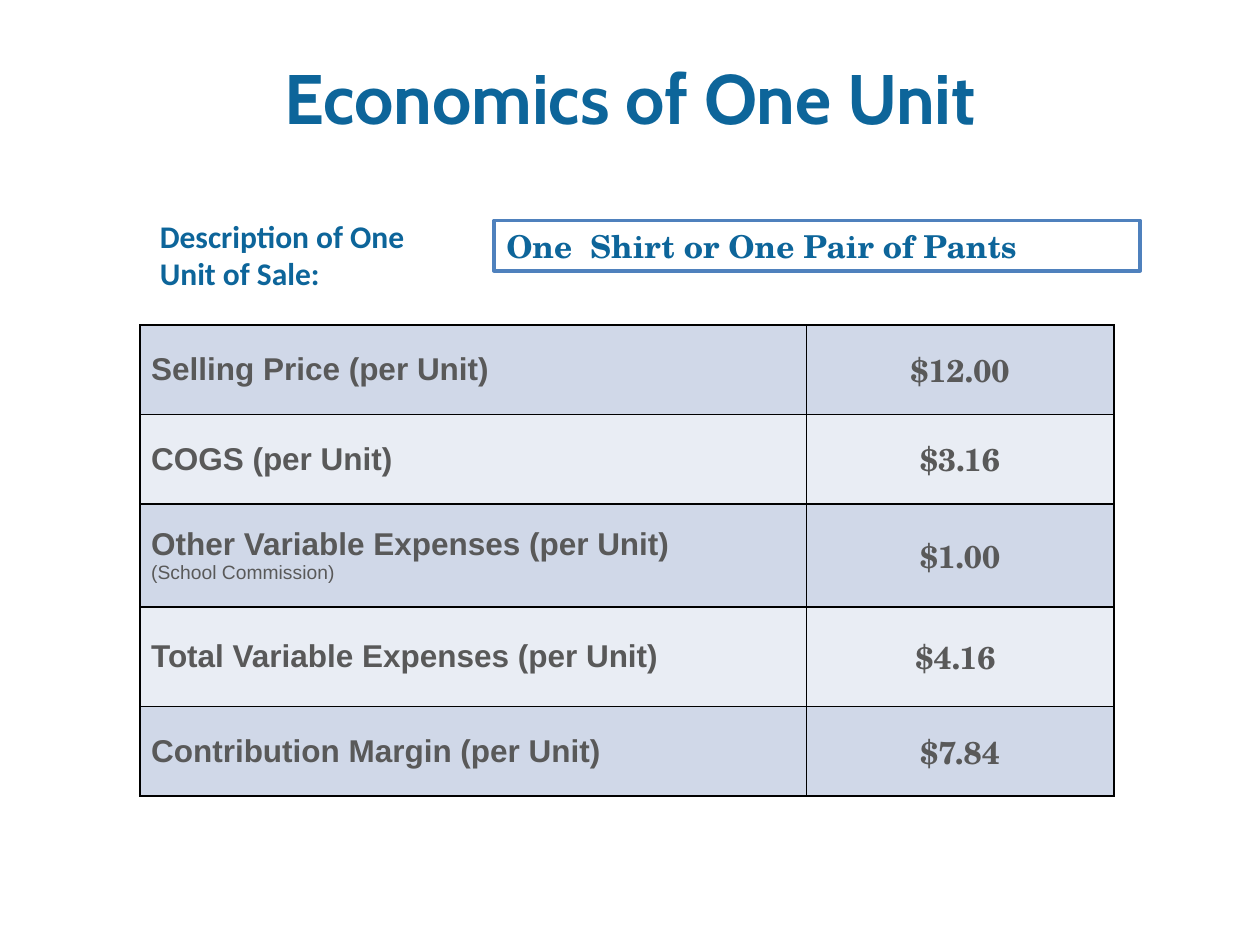
from pptx import Presentation
from pptx.dml.color import RGBColor
from pptx.enum.shapes import MSO_SHAPE
from pptx.enum.text import MSO_ANCHOR, PP_ALIGN
from pptx.oxml import parse_xml
from pptx.oxml.ns import nsdecls
from pptx.util import Inches, Pt

BLUE, GREY, BLACK = "0D659A", "595959", "000000"
BANDS = ("D0D8E8", "E9EDF4")
SERIF = "TeX Gyre Schola"

COLUMN_WIDTHS = (5.29, 2.44)
# Label, small note under it, amount, row height
ROWS = [
    ("Selling Price (per Unit)", "", "$12.00", 0.71),
    ("COGS (per Unit)", "", "$3.16", 0.71),
    ("Other Variable Expenses (per Unit)", "(School Commission)", "$1.00", 0.82),
    ("Total Variable Expenses (per Unit)", "", "$4.16 ", 0.79),
    ("Contribution Margin (per Unit)", "", "$7.84", 0.71),
]


def color(value):
    return RGBColor.from_string(value)


def style(font, name, size, value, bold=True):
    font.name, font.size, font.bold = name, Pt(size), bold
    font.color.rgb = color(value)


def write(frame, text, name, size, value, align=PP_ALIGN.LEFT):
    frame.word_wrap = True
    para = frame.paragraphs[0]
    para.text = text
    para.alignment = align
    style(para.font, name, size, value)
    return para


def add_borders(cell):
    properties = cell._tc.get_or_add_tcPr()
    for index, side in enumerate(("lnL", "lnR", "lnT", "lnB")):
        properties.insert(index, parse_xml(
            f'<a:{side} {nsdecls("a")} w="{Pt(1)}"><a:solidFill>'
            f'<a:srgbClr val="{BLACK}"/></a:solidFill></a:{side}>'))


def place_title(page, box):
    title = page.shapes.title
    title.left, title.top, title.width, title.height = map(Inches, box)
    title.text_frame.vertical_anchor = MSO_ANCHOR.MIDDLE
    para = write(title.text_frame, "Economics of One Unit", "Cabin", 40, BLUE,
                 PP_ALIGN.CENTER)
    para.line_spacing = Pt(34)


def place_unit_label(page, box):
    label = page.shapes.add_textbox(*map(Inches, box))
    write(label.text_frame, "Description of One Unit of Sale:", "Calibri", 18, BLUE)


def place_unit_field(page, box):
    field = page.shapes.add_shape(MSO_SHAPE.RECTANGLE, *map(Inches, box))
    field.shadow.inherit = False
    field.fill.solid()
    field.fill.fore_color.rgb = color("FFFFFF")
    field.line.color.rgb = color("4F81BD")
    field.line.width = Pt(2)
    write(field.text_frame, "One  Shirt or One Pair of Pants", SERIF, 18, BLUE)


def place_cost_table(page, box):
    table = page.shapes.add_table(len(ROWS), len(COLUMN_WIDTHS),
                                  *map(Inches, box)).table
    for column, width in zip(table.columns, COLUMN_WIDTHS):
        column.width = Inches(width)
    for index, (label, note, amount, height) in enumerate(ROWS):
        table.rows[index].height = Inches(height)
        label_cell, amount_cell = table.rows[index].cells
        for cell in (label_cell, amount_cell):
            cell.vertical_anchor = MSO_ANCHOR.MIDDLE
            cell.margin_left = cell.margin_right = Inches(0.09)
            cell.fill.solid()
            cell.fill.fore_color.rgb = color(BANDS[index % 2])
            add_borders(cell)
        para = write(label_cell.text_frame, label, "Arial", 18, GREY)
        if note:
            para.add_line_break()
            span = para.add_run()
            span.text = note
            style(span.font, "Arial", 11, GREY, bold=False)
        write(amount_cell.text_frame, amount, SERIF, 18, GREY, PP_ALIGN.CENTER)


def main():
    deck = Presentation()
    deck.slide_width, deck.slide_height = Inches(10), Inches(7.5)
    page = deck.slides.add_slide(deck.slide_layouts[5])

    # Heading
    place_title(page, (0.5, 0.3, 9, 1.12))
    # Costs and margin for one unit
    place_cost_table(page, (1.11, 2.58, sum(COLUMN_WIDTHS), sum(row[3] for row in ROWS)))
    # What one unit is
    place_unit_label(page, (1.17, 1.67, 2.59, 0.71))
    place_unit_field(page, (3.92, 1.75, 5.13, 0.4))

    deck.save("out.pptx")


if __name__ == "__main__":
    main()
